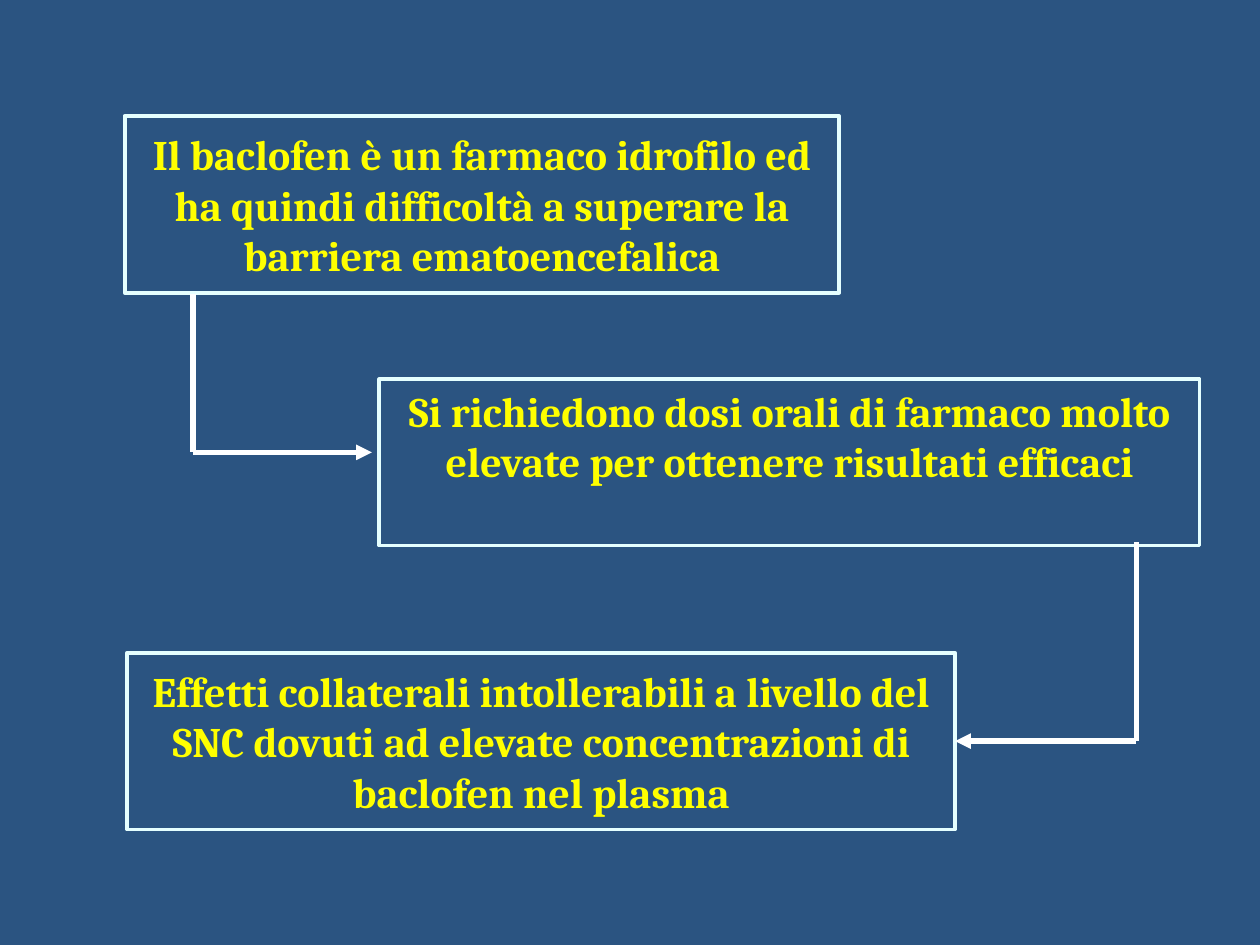
from dataclasses import dataclass
from typing import Optional

from lxml.etree import SubElement
from pptx import Presentation
from pptx.dml.color import RGBColor
from pptx.enum.shapes import MSO_CONNECTOR, MSO_SHAPE
from pptx.enum.text import MSO_ANCHOR, PP_ALIGN
from pptx.oxml.ns import qn
from pptx.util import Pt


@dataclass(frozen=True)
class Theme:
    background: RGBColor = RGBColor(0x2B, 0x54, 0x81)
    border: RGBColor = RGBColor(0xE5, 0xFF, 0xFF)
    text: RGBColor = RGBColor(0xFF, 0xFF, 0x00)
    arrow: RGBColor = RGBColor(0xFF, 0xFF, 0xFF)
    font: str = "Cambria"
    text_size: float = 24
    border_width: float = 2.25
    arrow_width: float = 3


@dataclass(frozen=True)
class Box:
    left: float
    top: float
    width: float
    height: float
    lines: tuple[str, ...]
    anchor: MSO_ANCHOR = MSO_ANCHOR.MIDDLE


@dataclass(frozen=True)
class ElbowArrow:
    """Goes down from (x, top) to bottom, then sideways to tip_x."""
    x: float
    top: float
    bottom: float
    tip_x: float
    joined_box: Optional[int] = None
    joined_side: int = 3


THEME = Theme()

BOXES = (
    Box(71.25, 66.25, 408.25, 101, (
        "Il baclofen è un farmaco idrofilo ed",
        "ha quindi difficoltà a superare la",
        "barriera ematoencefalica")),
    Box(216.75, 216.75, 468.75, 95, (
        "Si richiedono dosi orali di farmaco molto",
        "elevate per ottenere risultati efficaci"), MSO_ANCHOR.TOP),
    Box(72.75, 373, 473, 101, (
        "Effetti collaterali intollerabili a livello del",
        "SNC dovuti ad elevate concentrazioni di",
        "baclofen nel plasma")),
)

ARROWS = (
    ElbowArrow(110.25, 167.75, 258.5, 212.5),
    ElbowArrow(649.25, 309.75, 423.5, 547, joined_box=2),
)


def draw_box(slide, box: Box):
    shape = slide.shapes.add_shape(
        MSO_SHAPE.RECTANGLE,
        Pt(box.left), Pt(box.top), Pt(box.width), Pt(box.height))
    shape.shadow.inherit = False
    shape.fill.solid()
    shape.fill.fore_color.rgb = THEME.background
    shape.line.color.rgb = THEME.border
    shape.line.width = Pt(THEME.border_width)

    frame = shape.text_frame
    frame.word_wrap = False
    frame.vertical_anchor = box.anchor
    frame.text = "\n".join(box.lines)
    for paragraph in frame.paragraphs:
        paragraph.alignment = PP_ALIGN.CENTER
        font = paragraph.runs[0].font
        font.name = THEME.font
        font.size = Pt(THEME.text_size)
        font.bold = True
        font.color.rgb = THEME.text
    return shape


def draw_line(slide, x1: float, y1: float, x2: float, y2: float,
              arrowhead: bool = False):
    connector = slide.shapes.add_connector(
        MSO_CONNECTOR.STRAIGHT, Pt(x1), Pt(y1), Pt(x2), Pt(y2))
    connector.line.color.rgb = THEME.arrow
    connector.line.width = Pt(THEME.arrow_width)
    if arrowhead:
        outline = connector.line._get_or_add_ln()
        SubElement(outline, qn("a:tailEnd"), type="triangle")
    SubElement(connector.element.spPr, qn("a:effectLst"))
    return connector


def draw_elbow(slide, arrow: ElbowArrow, shapes: list) -> None:
    draw_line(slide, arrow.x, arrow.top, arrow.x, arrow.bottom)
    tip = draw_line(slide, arrow.x, arrow.bottom, arrow.tip_x, arrow.bottom,
                    arrowhead=True)
    if arrow.joined_box is not None:
        tip.end_connect(shapes[arrow.joined_box], arrow.joined_side)


def main() -> None:
    presentation = Presentation()
    presentation.slide_width = Pt(720)
    presentation.slide_height = Pt(540)
    slide = presentation.slides.add_slide(presentation.slide_layouts[6])
    slide.background.fill.solid()
    slide.background.fill.fore_color.rgb = THEME.background

    shapes = [draw_box(slide, box) for box in BOXES]
    for arrow in ARROWS:
        draw_elbow(slide, arrow, shapes)
    presentation.save("out.pptx")


if __name__ == "__main__":
    main()
